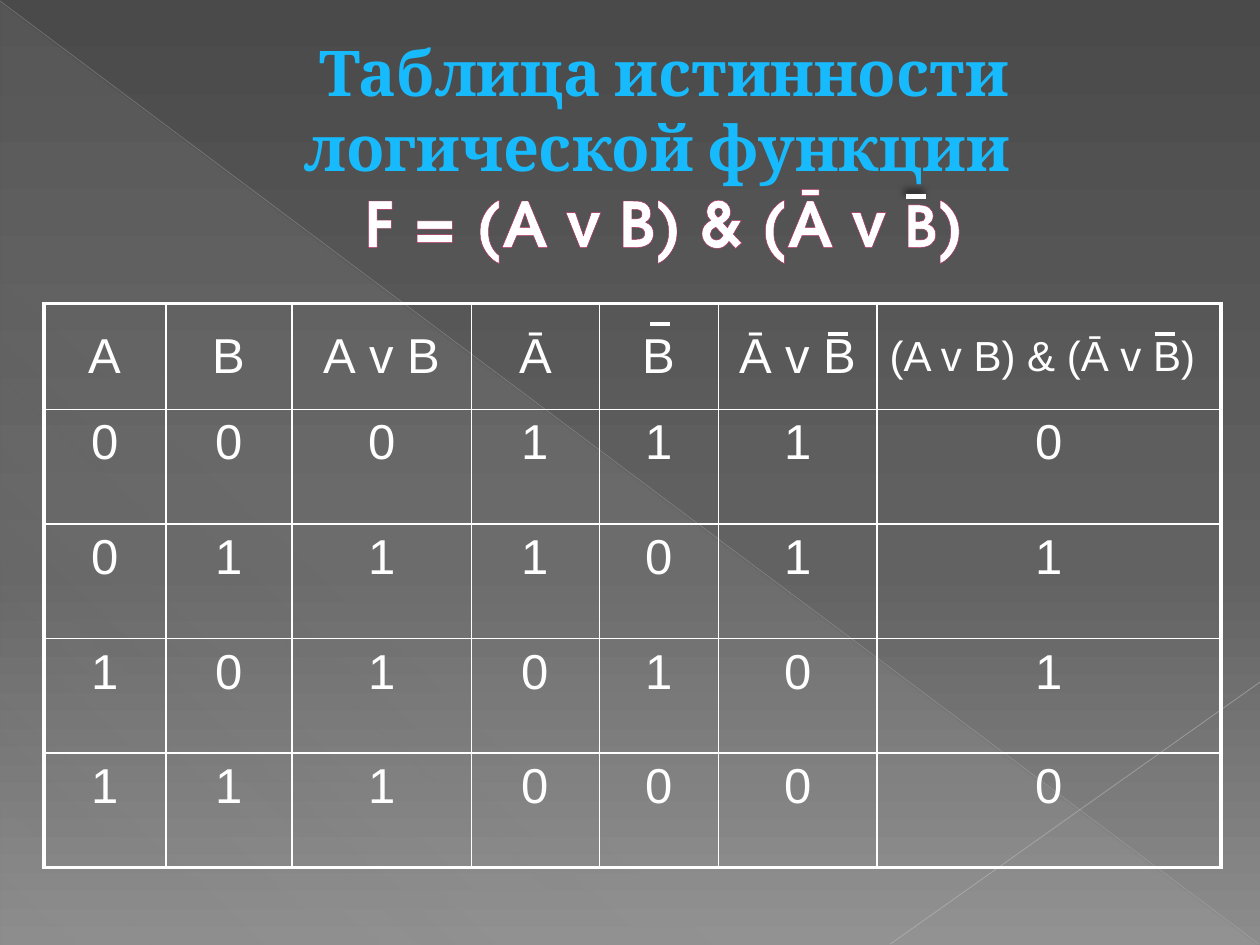
from lxml.etree import SubElement
from pptx import Presentation
from pptx.dml.color import RGBColor
from pptx.enum.shapes import MSO_CONNECTOR, MSO_SHAPE
from pptx.enum.text import MSO_ANCHOR, PP_ALIGN
from pptx.oxml.ns import qn
from pptx.util import Cm, Pt

HUES = {
    "white": "FFFFFF", "black": "000000", "title": "17BBFD", "edge": "B12761",
    "top": "4A4A4A", "mid": "626262", "low": "8C8C8C",
    "veil": "D2D2D2", "long": "BFBFBF", "short": "C6C6C6",
}
HEADS = ["А", "В", "А v В", "Ā", "B", "Ā v B", "(A v B) & (Ā v B)"]
BITS = ["0001110", "0111011", "1010101", "1110000"]
WIDTHS = [2.46, 2.54, 3.61, 2.59, 2.39, 3.2, 6.93]
BARS = [(13.11, 6.53), (16.69, 6.73), (23.29, 6.73)]


def rgb(hue):
    return RGBColor.from_string(HUES[hue])


def node(root, tag, **attrs):
    return SubElement(root, qn(tag), {key: str(val) for key, val in attrs.items()})


def tint(root, hue, alpha=100):
    color = node(root, "a:srgbClr", val=HUES[hue])
    if alpha < 100:
        node(color, "a:alpha", val=alpha * 1000)


def blend(fill, root, stops, angle):
    fill.solid()
    old = root.find(qn("a:solidFill"))
    grad = root.makeelement(qn("a:gradFill"), {"rotWithShape": "1"})
    old.getparent().replace(old, grad)
    items = node(grad, "a:gsLst")
    for pos, hue, alpha in stops:
        tint(node(items, "a:gs", pos=pos * 1000), hue, alpha)
    node(grad, "a:lin", ang=angle * 60000, scaled=0)


def put(para, text, font="Arial", size=28, hue="white", bold=False,
        align=PP_ALIGN.CENTER, edge=None):
    para.alignment = align
    run = para.add_run()
    run.text = text
    face = run.font
    face.name, face.size, face.bold = font, Pt(size), bold
    face.color.rgb = rgb(hue)
    if edge:
        face_xml = run._r.get_or_add_rPr()
        line = face_xml.makeelement(qn("a:ln"), {"w": str(Pt(0.5))})
        face_xml.insert(0, line)
        tint(node(line, "a:solidFill"), edge)
    return run


class Deck:
    """Hold the style and the current slide."""

    def __init__(self, wide, high):
        self.show = Presentation()
        self.show.slide_width, self.show.slide_height = Cm(wide), Cm(high)
        self.slide = self.show.slides.add_slide(self.show.slide_layouts[6])
        self.items = self.slide.shapes

    def back(self, stops, angle):
        fill = self.slide.background.fill
        fill.solid()
        blend(fill, self.slide.element.find(".//" + qn("p:bgPr")), stops, angle)

    def veil(self, left, top, wide, high, stops, angle):
        shape = self.items.add_shape(MSO_SHAPE.RIGHT_TRIANGLE,
                                     Cm(left), Cm(top), Cm(wide), Cm(high))
        shape.shadow.inherit = False
        shape.line.fill.background()
        blend(shape.fill, shape._element.spPr, stops, angle)

    def line(self, start, end, hue="white", width=2.25, alpha=100, shade=False):
        link = self.items.add_connector(MSO_CONNECTOR.STRAIGHT,
                                        *map(Cm, start + end))
        link.line.width = Pt(width)
        link.line.color.rgb = rgb(hue)
        props = link._element.spPr
        if alpha < 100:
            node(props.find(".//" + qn("a:srgbClr")), "a:alpha", val=alpha * 1000)
        effect = node(props, "a:effectLst")
        if shade:
            drop = node(effect, "a:outerShdw", blurRad=Pt(4), dist=Pt(3),
                        dir=245 * 60000, rotWithShape=0)
            tint(drop, "black", 60)

    def title(self, left, top, wide, high, name, rule):
        box = self.items.add_textbox(Cm(left), Cm(top), Cm(wide), Cm(high))
        frame = box.text_frame
        frame.word_wrap = True
        frame.vertical_anchor = MSO_ANCHOR.MIDDLE
        para = frame.paragraphs[0]
        para._p.get_or_add_pPr().set("marL", str(Cm(1.35)))
        style = {"size": 36, "bold": True, "edge": "edge"}
        put(para, name, font="Cambria", hue="title", **style)
        para.add_line_break()
        put(para, rule, font="TeX Gyre Adventor", **style)

    def table(self, left, top, widths, highs, rows):
        grid = self.items.add_table(len(rows), len(widths), Cm(left), Cm(top),
                                    Cm(sum(widths)), Cm(sum(highs))).table
        grid.first_row = grid.horz_banding = False
        for col, wide in zip(grid.columns, widths):
            col.width = Cm(wide)
        for row, high in zip(grid.rows, highs):
            row.height = Cm(high)
        for y, row in enumerate(rows):
            for x, text in enumerate(row):
                cell = grid.cell(y, x)
                last = x == len(row) - 1
                outer = {"L": x == 0, "R": last,
                         "T": y == 0, "B": y == len(rows) - 1}
                self.frame(cell, outer)
                style = {}
                if y == 0:
                    cell.vertical_anchor = MSO_ANCHOR.MIDDLE
                    if last:
                        style = {"size": 24, "align": PP_ALIGN.LEFT}
                put(cell.text_frame.paragraphs[0], text, **style)

    def frame(self, cell, outer):
        props = cell._tc.get_or_add_tcPr()
        for side, thick in outer.items():
            edge = node(props, "a:ln" + side, w=Pt(2.25 if thick else 1))
            tint(node(edge, "a:solidFill"), "white")
        cell.fill.background()

    def save(self):
        self.show.save("out.pptx")


def main():
    deck = Deck(25.4, 19.05)
    deck.back([(0, "top", 100), (60, "mid", 100), (100, "low", 100)], 90)
    deck.veil(0.02, 0.05, 25.35, 19,
              [(0, "veil", 10), (70, "veil", 8), (100, "veil", 1)], 133)
    deck.line((0, 0.02), (25.38, 19.03), "long", 0.39, 35)
    deck.line((25.4, 13.75), (17.95, 19.03), "short", 0.47, 45)
    deck.title(0.89, 1.12, 23.65, 3.68,
               "Таблица истинности логической функции ",
               "F = (A v B) & (Ā v В)")
    deck.table(0.89, 6.12, WIDTHS, [2.13] + [2.31] * len(BITS), [HEADS] + BITS)
    for x, y in BARS:
        deck.line((x, y), (x + 0.4, y))
    deck.line((18.26, 3.96), (18.66, 3.96), width=3, shade=True)
    deck.save()


if __name__ == "__main__":
    main()
